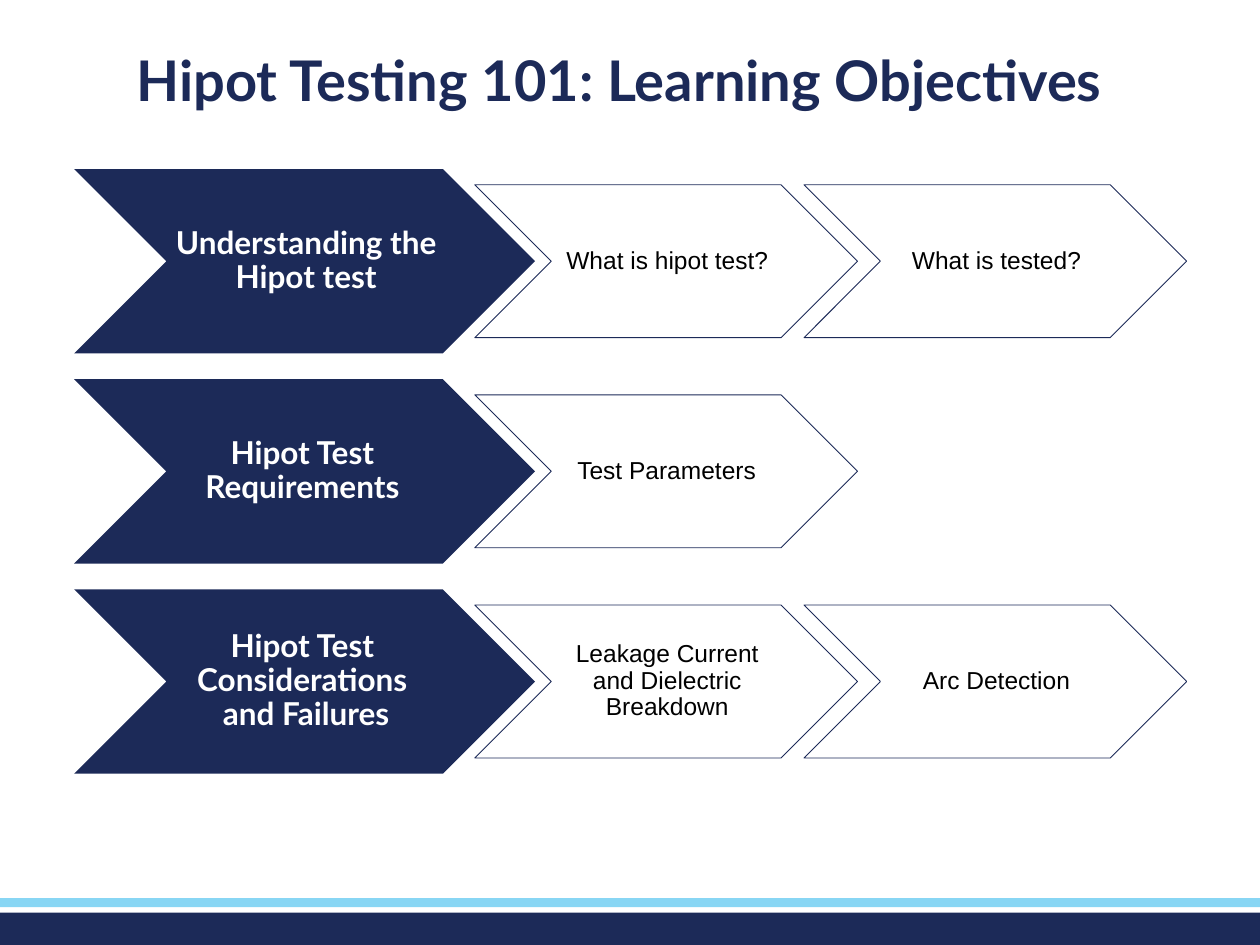
from dataclasses import dataclass

from pptx import Presentation
from pptx.dml.color import RGBColor
from pptx.enum.shapes import MSO_SHAPE
from pptx.enum.text import MSO_ANCHOR, MSO_AUTO_SIZE, PP_ALIGN
from pptx.shapes.autoshape import Shape
from pptx.slide import Slide
from pptx.text.text import TextFrame
from pptx.util import Pt

NAVY = RGBColor(0x1C, 0x2A, 0x58)
SKY = RGBColor(0x88, 0xD6, 0xF4)
WHITE = RGBColor(0xFF, 0xFF, 0xFF)
BLACK = RGBColor(0, 0, 0)

# Chevron grid, in points
ROW_TOP, ROW_STEP = 96.6, 120.1
TOPIC_LEFT, TOPIC_WIDTH, TOPIC_HEIGHT = 42.4, 263.3, 105.3
DETAIL_LEFT, DETAIL_STEP = 271.3, 188.1
DETAIL_WIDTH, DETAIL_HEIGHT = 218.7, 87.4


@dataclass
class Detail:
    text: str
    indent: float | None = None  # left margin; None means centred


@dataclass
class Objective:
    topic: str
    details: list[Detail]


OBJECTIVES = [
    Objective("Understanding the Hipot test",
              [Detail("What is hipot test?"), Detail("What is tested?")]),
    Objective("Hipot Test \vRequirements ",
              [Detail("Test Parameters", indent=13.5)]),
    Objective("Hipot Test \vConsiderations \vand Failures",
              [Detail("Leakage Current and Dielectric Breakdown"), Detail("Arc Detection")]),
]


def write_text(frame: TextFrame, text: str, *, font: str, size: float, color: RGBColor,
               bold: bool = False, indent: float | None = None) -> None:
    """Fill a frame with one paragraph, centred unless an indent is given."""
    frame.word_wrap = True
    frame.auto_size = MSO_AUTO_SIZE.NONE
    frame.vertical_anchor = MSO_ANCHOR.MIDDLE
    paragraph = frame.paragraphs[0]
    paragraph.text = text
    paragraph.line_spacing = 0.9
    paragraph.space_before = Pt(0)
    paragraph.alignment = PP_ALIGN.CENTER if indent is None else PP_ALIGN.LEFT
    if indent is not None:
        properties = paragraph._p.get_or_add_pPr()
        properties.set("marL", str(Pt(indent)))
        properties.set("indent", "0")
    for run in paragraph.runs:
        run.font.name = font
        run.font.size = Pt(size)
        run.font.bold = bold
        run.font.color.rgb = color


def add_block(slide: Slide, kind: MSO_SHAPE, left: float, top: float, width: float,
              height: float, fill: RGBColor, line: RGBColor | None = None) -> Shape:
    shape = slide.shapes.add_shape(kind, Pt(left), Pt(top), Pt(width), Pt(height))
    shape.shadow.inherit = False
    shape.fill.solid()
    shape.fill.fore_color.rgb = fill
    if line is None:
        shape.line.fill.background()
    else:
        shape.line.color.rgb = line
        shape.line.width = Pt(0.5)
    return shape


def set_margins(frame: TextFrame, left: float) -> None:
    frame.margin_left, frame.margin_right = Pt(left), Pt(0)
    frame.margin_top = frame.margin_bottom = Pt(0.7)


def add_objective(slide: Slide, objective: Objective, top: float) -> None:
    topic = add_block(slide, MSO_SHAPE.CHEVRON, TOPIC_LEFT, top,
                      TOPIC_WIDTH, TOPIC_HEIGHT, NAVY)
    set_margins(topic.text_frame, 1.8)
    write_text(topic.text_frame, objective.topic, font="Lato", size=18,
               color=WHITE, bold=True)

    detail_top = top + (TOPIC_HEIGHT - DETAIL_HEIGHT) / 2
    for column, detail in enumerate(objective.details):
        chevron = add_block(slide, MSO_SHAPE.CHEVRON, DETAIL_LEFT + column * DETAIL_STEP,
                            detail_top, DETAIL_WIDTH, DETAIL_HEIGHT, WHITE, NAVY)
        set_margins(chevron.text_frame, 1.4)
        write_text(chevron.text_frame, detail.text, font="Arial", size=14,
                   color=BLACK, indent=detail.indent)


def main() -> None:
    presentation = Presentation()
    presentation.slide_width, presentation.slide_height = Pt(720), Pt(540)
    slide = presentation.slides.add_slide(presentation.slide_layouts[5])

    # Footer bands
    add_block(slide, MSO_SHAPE.RECTANGLE, 0, 521.5, 720, 18.5, NAVY)
    add_block(slide, MSO_SHAPE.RECTANGLE, 0, 513.2, 720, 5.2, SKY)

    # Objectives, one row of chevrons each
    for row, objective in enumerate(OBJECTIVES):
        add_objective(slide, objective, ROW_TOP + row * ROW_STEP)

    # Title
    title = slide.shapes.title
    title.left, title.top, title.width, title.height = Pt(30), Pt(23.8), Pt(648), Pt(47.5)
    write_text(title.text_frame, "Hipot Testing 101: Learning Objectives",
               font="Lato", size=32, color=NAVY, bold=True)

    presentation.save("out.pptx")


if __name__ == "__main__":
    main()
